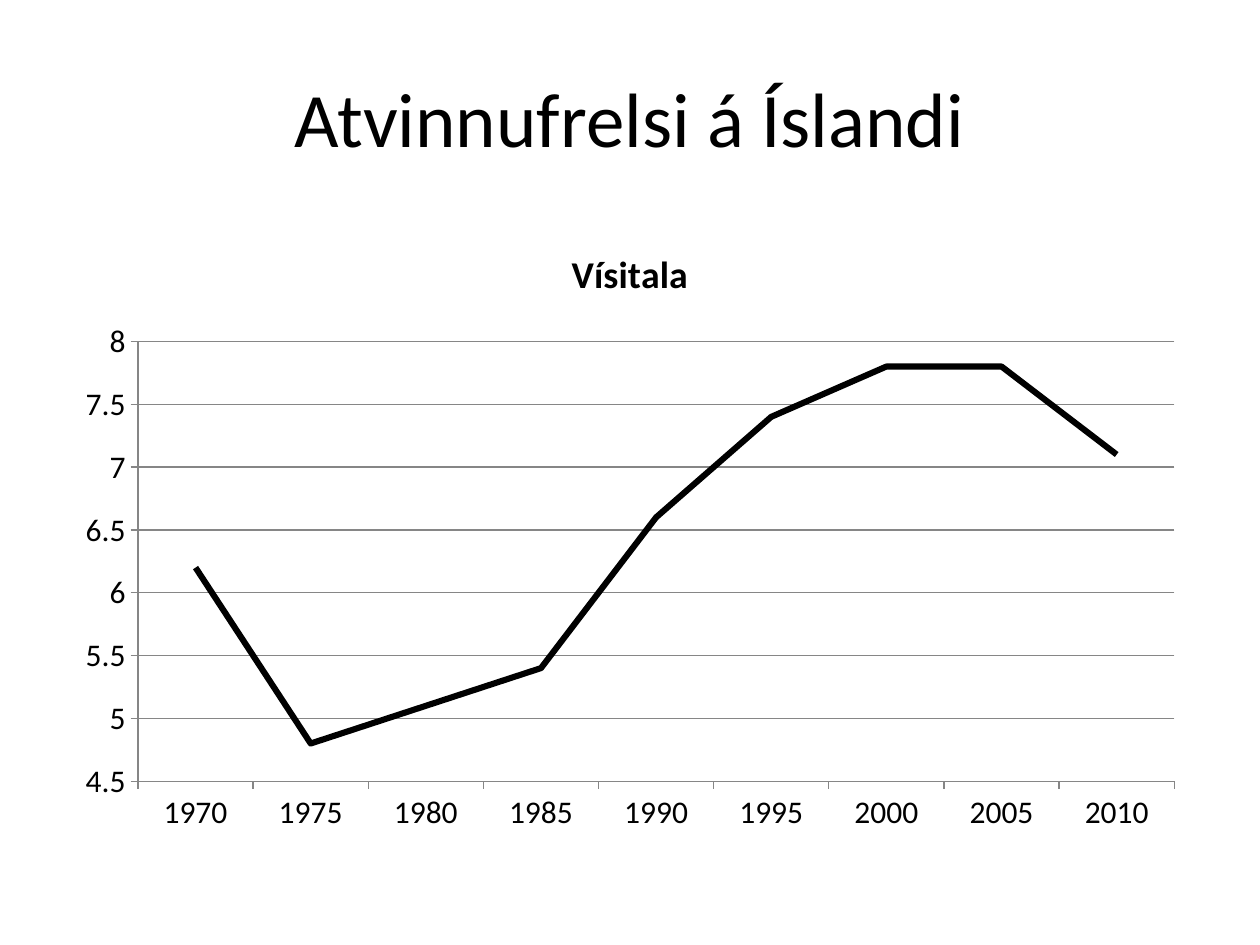
from pptx import Presentation
from pptx.chart.data import CategoryChartData
from pptx.dml.color import RGBColor
from pptx.enum.chart import XL_CHART_TYPE as ChartType, XL_TICK_MARK as TickMark
from pptx.enum.text import MSO_ANCHOR as Anchor, PP_ALIGN as Align
from pptx.util import Cm, Pt

FONT = "Calibri"
BLACK = "000000"
GREY = "868686"


def style_font(font, size, bold=False):
    font.name = FONT
    font.size = Pt(size)
    font.bold = bold
    font.color.rgb = RGBColor.from_string(BLACK)


def style_line(line, color, width):
    line.color.rgb = RGBColor.from_string(color)
    line.width = Pt(width)


prs = Presentation()
prs.slide_width, prs.slide_height = Cm(25.4), Cm(19.05)
slide = prs.slides.add_slide(prs.slide_layouts[5])

heading = slide.shapes.title
heading.left, heading.top = Cm(1.27), Cm(0.76)
heading.width, heading.height = Cm(22.86), Cm(3.18)
heading.text_frame.text = "Atvinnufrelsi á Íslandi"
heading.text_frame.vertical_anchor = Anchor.MIDDLE
heading_line = heading.text_frame.paragraphs[0]
heading_line.alignment = Align.CENTER
style_font(heading_line.runs[0].font, 44)

freedom_index = CategoryChartData()
freedom_index.categories = [str(year) for year in range(1970, 2011, 5)]
freedom_index.add_series("Vísitala", (6.2, 4.8, 5.1, 5.4, 6.6, 7.4, 7.8, 7.8, 7.1))

chart = slide.shapes.add_chart(
    ChartType.LINE, Cm(1.27), Cm(4.45), Cm(22.86), Cm(12.57), freedom_index
).chart
style_font(chart.font, 18)
chart.has_legend = False
chart.has_title = True
chart.chart_title.include_in_layout = False
chart.chart_title.text_frame.text = "Vísitala"
style_font(chart.chart_title.text_frame.paragraphs[0].runs[0].font, 21.6, bold=True)

years, scale = chart.category_axis, chart.value_axis
for axis in (years, scale):
    axis.major_tick_mark = TickMark.OUTSIDE
    axis.minor_tick_mark = TickMark.NONE
    style_line(axis.format.line, GREY, 0.75)
years.has_major_gridlines = False
scale.minimum_scale, scale.maximum_scale, scale.major_unit = 4.5, 8, 0.5
scale.tick_labels.number_format = "General"
scale.tick_labels.number_format_is_linked = False
scale.has_major_gridlines = True
style_line(scale.major_gridlines.format.line, GREY, 0.75)

chart.plots[0].vary_by_categories = False
curve = chart.plots[0].series[0]
curve.smooth = False
style_line(curve.format.line, BLACK, 3.5)

prs.save("out.pptx")
